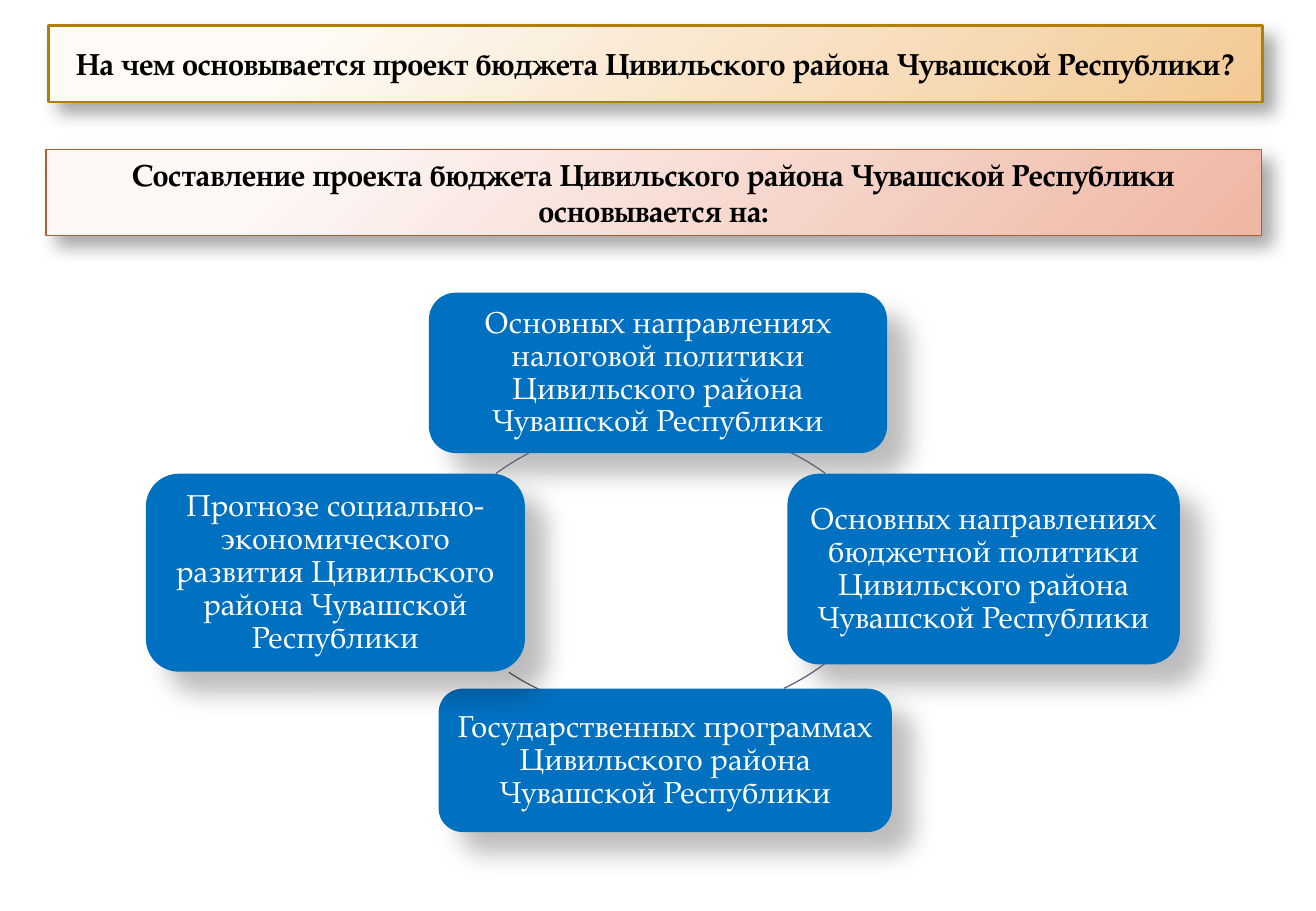
from lxml import etree
from pptx import Presentation
from pptx.dml.color import RGBColor
from pptx.enum.shapes import MSO_SHAPE as Preset
from pptx.enum.text import MSO_ANCHOR as Anchor, MSO_AUTO_SIZE as AutoSize, PP_ALIGN as Align
from pptx.oxml.ns import qn
from pptx.util import Inches, Pt

FONT = "TeX Gyre Pagella"
COLORS = {
    "black": "000000",
    "white": "FFFFFF",
    "box": "0070C0",
    "arc": "5A6378",
    "gold_light": "FEFBF6",
    "gold_dark": "F3C994",
    "gold_line": "B07F09",
    "red_light": "FDF7F6",
    "red_dark": "EFB6A2",
    "red_line": "AE6035",
}
ARC_SIZE = 3.99
CYCLE = [
    ("Основных направлениях налоговой политики Цивильского района Чувашской Республики",
     (3.53, 2.41, 3.77, 1.32), (3.63, 3.52), (296.4, 305.8)),
    ("Основных направлениях бюджетной политики Цивильского района Чувашской Республики",
     (6.48, 3.9, 3.23, 1.57), (3.6, 1.87), (53.3, 64.6)),
    ("Государственных программах Цивильского района Чувашской Республики",
     (3.61, 5.67, 3.73, 1.18), (3.3, 1.88), (115.5, 123.7)),
    ("Прогнозе социально-экономического развития Цивильского района Чувашской Республики",
     (1.2, 3.9, 3.12, 1.63), (3.27, 3.51), (233.6, 242.7)),
]


def color(name):
    """Return the named colour."""
    return RGBColor.from_string(COLORS[name])


def add_shadow(shape, alpha, blur, distance):
    """Give the shape a black shadow falling to the lower right."""
    shape.shadow.inherit = False
    effects = shape._element.spPr.find(qn("a:effectLst"))
    shadow = etree.SubElement(effects, qn("a:outerShdw"), blurRad=str(Pt(blur)),
                              dist=str(Pt(distance)), dir="2700000",
                              algn="tl", rotWithShape="0")
    black = etree.SubElement(shadow, qn("a:srgbClr"), val=COLORS["black"])
    etree.SubElement(black, qn("a:alpha"), val=str(alpha * 1000))


def fill_gradient(shape, light, dark):
    """Fill the shape with a gradient spreading from its upper left corner."""
    shape.fill.gradient()
    for stop, position, name in zip(shape.fill.gradient_stops, (0.2, 1), (light, dark)):
        stop.position = position
        stop.color.rgb = color(name)
    gradient = shape._element.spPr.find(qn("a:gradFill"))
    gradient.remove(gradient.find(qn("a:lin")))
    circle = etree.SubElement(gradient, qn("a:path"), {"path": "circle"})
    etree.SubElement(circle, qn("a:fillToRect"),
                     l="-15000", t="-15000", r="115000", b="115000")


def write_text(shape, text, font_color, bold, inset, line_spacing):
    """Write centred text into the shape."""
    frame = shape.text_frame
    frame.text = text
    frame.word_wrap = True
    frame.auto_size = AutoSize.NONE
    frame.vertical_anchor = Anchor.MIDDLE
    frame.margin_left = frame.margin_right = Inches(inset)
    frame.margin_top = frame.margin_bottom = Inches(min(inset, 0.07))
    paragraph = frame.paragraphs[0]
    paragraph.alignment = Align.CENTER
    paragraph.line_spacing = line_spacing
    paragraph.font.name = FONT
    paragraph.font.size = Pt(18)
    paragraph.font.bold = bold
    paragraph.font.color.rgb = color(font_color)


def format_banner(shape, box, text, palette, line_width):
    """Place a gradient banner with bold text in the box."""
    shape.left, shape.top, shape.width, shape.height = map(Inches, box)
    fill_gradient(shape, f"{palette}_light", f"{palette}_dark")
    shape.line.color.rgb = color(f"{palette}_line")
    shape.line.width = Pt(line_width)
    add_shadow(shape, 35, 10.2, 8)
    write_text(shape, text, "black", True, 0.1, 1)


def add_cycle_box(slide, box, text):
    """Add one rounded box of the cycle."""
    shape = slide.shapes.add_shape(Preset.ROUNDED_RECTANGLE, *map(Inches, box))
    shape.fill.solid()
    shape.fill.fore_color.rgb = color("box")
    shape.line.fill.background()
    add_shadow(shape, 26, 15, 18)
    write_text(shape, text, "white", False, 0.07, 0.9)


def add_cycle_arc(slide, corner, angles):
    """Add a circle's arc between two angles given in degrees."""
    arc = slide.shapes.add_shape(Preset.ARC, *map(Inches, (*corner, ARC_SIZE, ARC_SIZE)))
    for index, angle in enumerate(angles):
        arc.adjustments[index] = angle * 0.6
    arc.fill.background()
    arc.line.color.rgb = color("arc")
    arc.line.width = Pt(0.75)
    arc.shadow.inherit = False


def build_slide(presentation):
    """Build the slide on the foundations of the budget."""
    slide = presentation.slides.add_slide(presentation.slide_layouts[5])
    format_banner(slide.shapes.title, (0.4, 0.21, 9.99, 0.63),
                  "На чем основывается проект бюджета Цивильского района Чувашской Республики?",
                  "gold", 1.5)
    basis = slide.shapes.add_shape(Preset.RECTANGLE, 0, 0, 0, 0)
    format_banner(basis, (0.38, 1.23, 10, 0.71),
                  "Составление проекта бюджета Цивильского района Чувашской Республики "
                  "основывается на:", "red", 0.75)
    for text, box, corner, angles in CYCLE:
        add_cycle_box(slide, box, text)
        add_cycle_arc(slide, corner, angles)


def main():
    """Create and save the presentation."""
    presentation = Presentation()
    presentation.slide_width = Inches(10.83)
    presentation.slide_height = Inches(7.5)
    build_slide(presentation)
    presentation.save("out.pptx")


if __name__ == "__main__":
    main()
